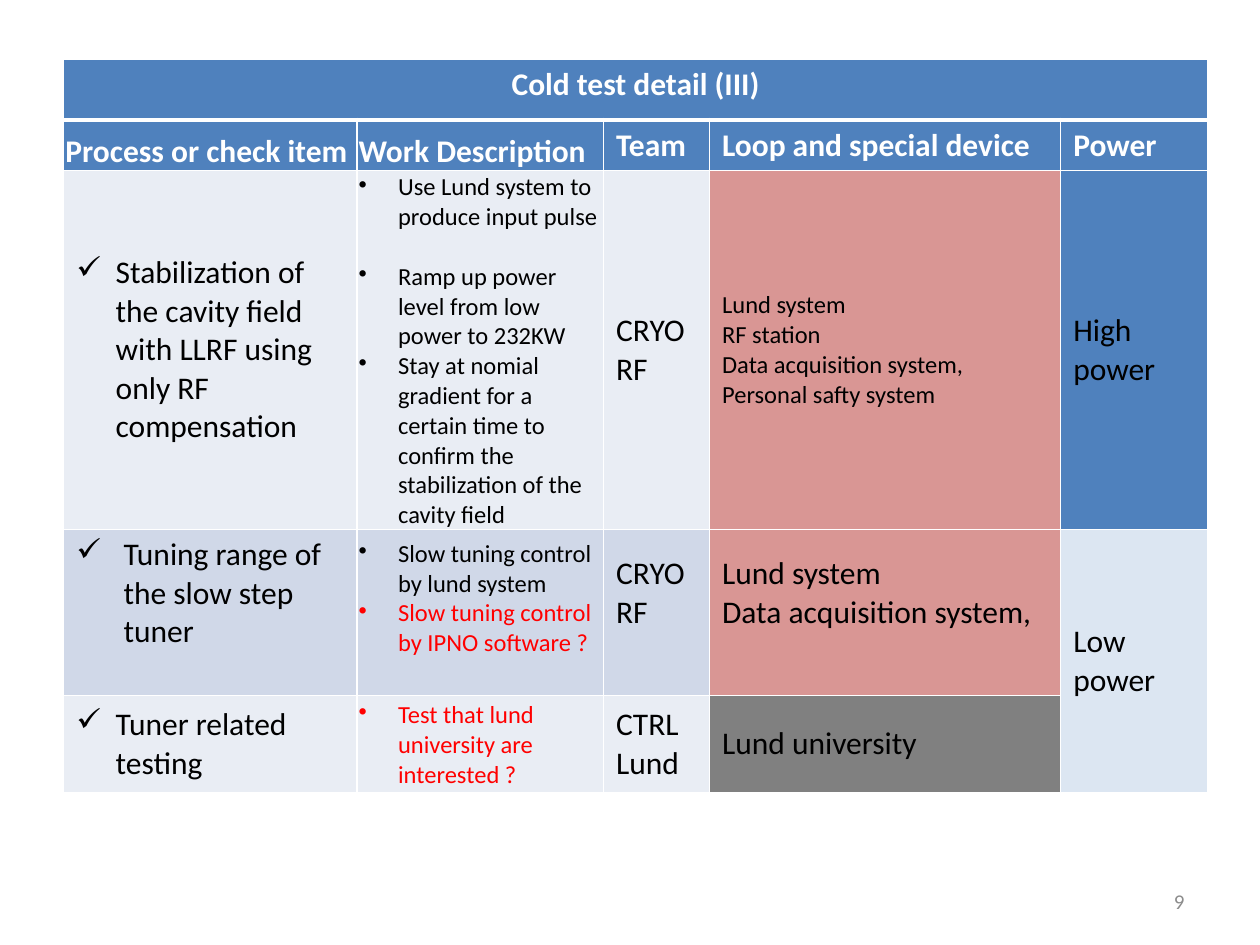
from dataclasses import dataclass

from lxml import etree
from pptx import Presentation
from pptx.dml.color import RGBColor
from pptx.enum import text
from pptx.oxml import ns
from pptx.util import Pt


@dataclass(frozen=True)
class Theme:
    font: str = "Calibri"
    large: float = 18
    small: float = 14
    footer: float = 12
    black: str = "000000"
    white: str = "FFFFFF"
    red: str = "FF0000"
    gray_text: str = "8C8C8C"
    blue: str = "4F81BD"
    light: str = "E9EDF4"
    band: str = "D0D8E8"
    pale: str = "DCE6F2"
    rose: str = "D99694"
    gray: str = "808080"


THEME = Theme()
COLUMNS = [167.6, 140.9, 60.6, 200.7, 84]
ROWS = [35, 29, 205, 95, 55.4]
HEADERS = ["Process or check item", "Work Description", "Team", "Loop and special device", "Power"]
MIDDLE = text.MSO_ANCHOR.MIDDLE
TIGHT = (1, 1, 1, 0)
LINE_LARGE, LINE_SMALL = 22, 17


def add_span(para, words, size, color, bold=False):
    span = para.add_run()
    span.text = words
    span.font.name = THEME.font
    span.font.size = Pt(size)
    span.font.bold = bold
    span.font.color.rgb = RGBColor.from_string(color)


def set_bullet(para, mark, indent):
    props = para._p.get_or_add_pPr()
    props.set("marL", str(Pt(indent)))
    props.set("indent", str(-Pt(indent)))
    etree.SubElement(props, ns.qn("a:buChar")).set("char", mark)


def set_borders(cell, top=1, bottom=1):
    props = cell._tc.get_or_add_tcPr()
    for side, width in zip("LRTB", (1, 1, top, bottom)):
        line = etree.SubElement(props, ns.qn(f"a:ln{side}"), w=str(Pt(width)))
        fill = etree.SubElement(line, ns.qn("a:solidFill"))
        etree.SubElement(fill, ns.qn("a:srgbClr"), val=THEME.white)


def style_cell(cell, fill, anchor=MIDDLE, insets=(7.2, 3.6, 7.2, 3.6), lift=0):
    cell.fill.solid()
    cell.fill.fore_color.rgb = RGBColor.from_string(fill)
    cell.vertical_anchor = anchor
    left, top, right, bottom = insets
    cell.margin_left, cell.margin_top = Pt(left), Pt(top)
    cell.margin_right, cell.margin_bottom = Pt(right), Pt(bottom + lift)


def write_lines(cell, lines, size=THEME.large, color=THEME.black, bold=False, mark=None, indent=22.5):
    frame = cell.text_frame
    for index, words in enumerate(lines):
        para = frame.paragraphs[0] if index == 0 else frame.add_paragraph()
        if mark:
            set_bullet(para, mark, indent)
        shade = THEME.red if words.endswith("?") else color
        add_span(para, words, size, shade, bold)


def fill_headers(table):
    title = table.cell(0, 0)
    style_cell(title, THEME.blue, text.MSO_ANCHOR.TOP)
    write_lines(title, ["Cold test detail (III)"], color=THEME.white, bold=True)
    title.text_frame.paragraphs[0].alignment = text.PP_ALIGN.CENTER
    for column, words in enumerate(HEADERS):
        cell = table.cell(1, column)
        if column < 2:
            style_cell(cell, THEME.blue, text.MSO_ANCHOR.BOTTOM, TIGHT)
        else:
            style_cell(cell, THEME.blue, text.MSO_ANCHOR.TOP)
        write_lines(cell, [words], color=THEME.white, bold=True)


def fill_test(table, row, fill, item, work, team, devices, device_fill,
              device_size=THEME.large, indent=22.5, lifted=False):
    process, description, crew, loop = [table.cell(row, column) for column in range(4)]
    lift = LINE_LARGE if lifted else 0
    for cell, shade in ((process, fill), (crew, fill), (loop, device_fill)):
        style_cell(cell, shade, lift=lift)
    style_cell(description, fill, insets=TIGHT, lift=LINE_SMALL if lifted else 0)
    write_lines(process, [item], mark="✓", indent=indent)
    write_lines(description, work, THEME.small, mark="•")
    write_lines(crew, team)
    write_lines(loop, devices, device_size)


def fill_power(table, row, fill, level):
    cell = table.cell(row, 4)
    style_cell(cell, fill)
    write_lines(cell, [level, "power"])


def add_test_table(page):
    frame = page.shapes.add_table(len(ROWS), len(COLUMNS), Pt(36.4), Pt(33.6),
                                  Pt(sum(COLUMNS)), Pt(sum(ROWS)))
    table = frame.table
    table.first_row = table.horz_banding = False
    for column, width in zip(table.columns, COLUMNS):
        column.width = Pt(width)
    for index, height in enumerate(ROWS):
        table.rows[index].height = Pt(height)
        for cell in table.rows[index].cells:
            set_borders(cell, top=3 if index == 1 else 1, bottom=3 if index == 0 else 1)
    table.cell(0, 0).merge(table.cell(0, 4))
    table.cell(3, 4).merge(table.cell(4, 4))
    return table


def add_page_number(page):
    box = page.shapes.add_textbox(Pt(516), Pt(500.5), Pt(168), Pt(28.75))
    frame = box.text_frame
    frame.word_wrap = True
    frame.vertical_anchor = MIDDLE
    para = frame.paragraphs[0]
    para.alignment = text.PP_ALIGN.RIGHT
    add_span(para, "9", THEME.footer, THEME.gray_text)


def main():
    deck = Presentation()
    deck.slide_width, deck.slide_height = Pt(720), Pt(540)
    page = deck.slides.add_slide(deck.slide_layouts[6])
    add_page_number(page)
    table = add_test_table(page)
    fill_headers(table)
    fill_test(table, 2, THEME.light,
              "Stabilization of the cavity field with LLRF using only RF compensation",
              ["Use Lund system to produce input pulse",
               "Ramp up power level from low power to 232KW",
               "Stay at nomial gradient for a certain time to confirm the stabilization of the cavity field"],
              ["CRYO", "RF"],
              ["Lund system", "RF station", "Data acquisition system,", "Personal safty system"],
              THEME.rose, device_size=THEME.small)
    table.cell(2, 1).text_frame.paragraphs[0].space_after = Pt(LINE_SMALL)
    fill_test(table, 3, THEME.band, "Tuning range of the slow step tuner",
              ["Slow tuning control by lund system", "Slow tuning control by IPNO software ?"],
              ["CRYO", "RF"], ["Lund system", "Data acquisition system,"],
              THEME.rose, indent=27, lifted=True)
    fill_test(table, 4, THEME.light, "Tuner related testing",
              ["Test that lund university are interested ?"],
              ["CTRL", "Lund"], ["Lund university"], THEME.gray)
    fill_power(table, 2, THEME.blue, "High")
    fill_power(table, 3, THEME.pale, "Low")
    deck.save("out.pptx")


if __name__ == "__main__":
    main()
